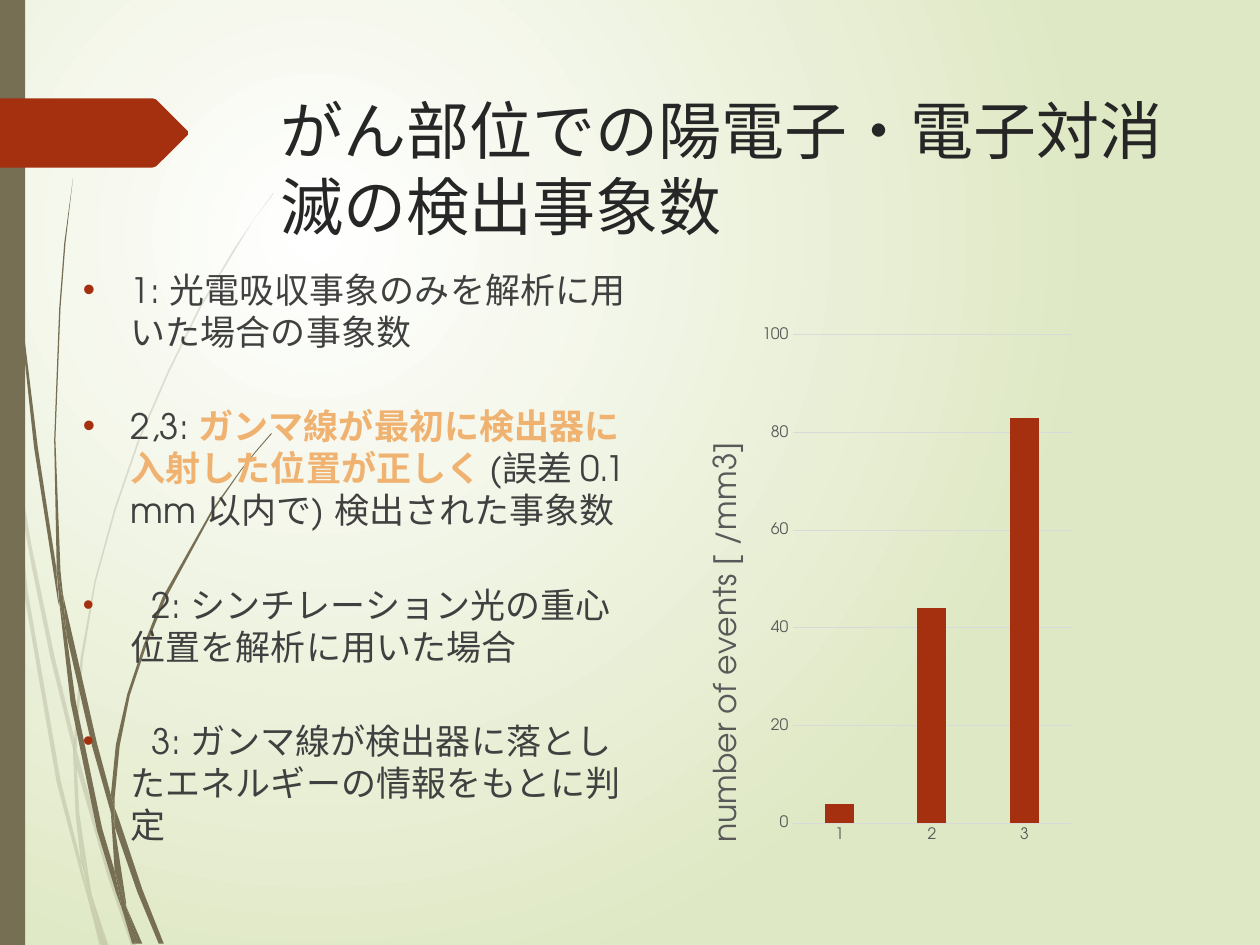
import pptx
import pptx.chart.data
import pptx.dml.color
import pptx.enum.chart
import pptx.enum.shapes
import pptx.enum.text
import pptx.oxml
import pptx.oxml.ns
import pptx.util

Inches, Pt = pptx.util.Inches, pptx.util.Pt
RGB = pptx.dml.color.RGBColor
qn = pptx.oxml.ns.qn

# Content
TITLE = "がん部位での陽電子・電子対消滅の検出事象数"
BULLETS = [
    [("1: 光電吸収事象のみを解析に用いた場合の事象数", "plain")],
    [("2,3: ", "plain"),
     ("ガンマ線が最初に検出器に入射した位置が正しく ", "key"),
     ("(誤差 0.1 mm 以内で) 検出された事象数", "plain")],
    [("　", "indent"), ("2: シンチレーション光の重心位置を解析に用いた場合", "plain")],
    [("　", "indent"), ("3: ガンマ線が検出器に落としたエネルギーの情報をもとに判定", "plain")],
]
CATEGORIES = ["1", "2", "3"]
EVENTS = [4, 44, 83]
AXIS_TITLE = "number of events [ /mm3]"

# Format
FONT = "TeX Gyre Adventor"
WHITE, PALE_GREEN = RGB(0xFF, 0xFF, 0xFF), RGB(0xDF, 0xE8, 0xC4)
OLIVE, RUST, ORANGE = RGB(0x76, 0x6F, 0x54), RGB(0xA5, 0x30, 0x10), RGB(0xF0, 0xB2, 0x70)
TITLE_INK, BODY_INK = RGB(0x26, 0x26, 0x26), RGB(0x40, 0x40, 0x40)
AXIS_INK, GRID = RGB(0x59, 0x59, 0x59), RGB(0xD9, 0xD9, 0xD9)
STYLES = {
    "title": {"size": Pt(36), "name": FONT, "color": TITLE_INK},
    "plain": {"size": Pt(20), "name": FONT, "color": BODY_INK, "bold": False},
    "key": {"size": Pt(20), "name": FONT, "color": ORANGE, "bold": True},
    "indent": {"size": Pt(12), "name": FONT, "color": BODY_INK},
    "chart": {"size": Pt(10), "name": FONT},
    "tick": {"size": Pt(9), "name": FONT, "color": AXIS_INK},
    "axis title": {"size": Pt(18), "name": FONT, "color": AXIS_INK, "bold": False},
}

# Outlines in inches: blades of grass behind the text, and the title's tag
PALE_BLADES = [
    [(.08, 3.5), (.06, 3.22), (0, 2.82), (0, 2.99), (.07, 3.44)],
    [(.4, 5.22), (.59, 5.99), (.59, 5.86), (.43, 5.2), (.25, 4.33), (.1, 3.45),
     (.12, 3.76), (.25, 4.49)],
    [(.64, 6.07), (.61, 5.96), (.61, 6.1), (.85, 6.94), (1.04, 7.5), (1.08, 7.5), (.88, 6.92)],
    [(.83, 7.5), (.86, 7.5), (.73, 7.11)],
    [(.64, 6.83), (.48, 6.19), (.22, 4.69), (.12, 3.76), (.08, 3.5), (.19, 4.7),
     (.45, 6.21), (.64, 6.93), (.7, 7.14), (.69, 7.07)],
    [(.58, 5.99), (.6, 6.46), (.64, 6.83), (.67, 6.92), (.73, 7.11), (.72, 7.06),
     (.63, 6.46), (.61, 6.1), (.61, 6.08)],
    [(.61, 5.84), (.66, 5.22), (.76, 4.62), (.92, 4.04), (1.11, 3.49), (1.34, 2.96),
     (1.59, 2.45), (1.87, 1.98), (2.01, 1.75), (2.17, 1.54), (2.17, 1.53), (2.01, 1.75),
     (1.86, 1.97), (1.58, 2.44), (1.33, 2.95), (1.1, 3.48), (.91, 4.03), (.75, 4.61),
     (.64, 5.22), (.59, 5.84), (.59, 5.86), (.61, 5.96)],
    [(.7, 7.14), (.79, 7.5), (.82, 7.5)],
    [(.61, 6.08), (.61, 6.1), (.61, 5.96), (.59, 5.86), (.58, 5.99)],
    [(.67, 6.92), (.65, 6.83), (.69, 7.07), (.7, 7.14), (.82, 7.5), (.83, 7.5), (.73, 7.11)],
]
DARK_BLADES = [
    [(.05, 1.1), (.14, 2.33), (.27, 3.55), (.46, 4.77), (.47, 4.81), (.45, 4.57), (.45, 4.53),
     (.3, 3.55), (.15, 2.32), (.06, 1.09), (.04, .48), (.03, 0), (.02, 0), (.03, .48)],
    [(.73, 5.92), (.88, 6.45), (.88, 6.33), (.88, 6.31), (.77, 5.9), (.5, 4.72), (.53, 5.05)],
    [(.94, 6.49), (.91, 6.41), (.91, 6.56), (1.09, 7.08), (1.26, 7.49), (1.3, 7.49), (1.13, 7.06)],
    [(.91, 6.91), (.81, 6.57), (.6, 5.56), (.53, 5.05), (.47, 4.77), (.56, 5.57),
     (.77, 6.59), (.92, 7.08), (.97, 7.22), (.96, 7.17)],
    [(.5, 4.72), (.48, 4.53), (.44, 3.49), (.48, 2.45), (.52, 1.93), (.58, 1.41),
     (.51, 1.93), (.47, 2.45), (.43, 3.49), (.45, 4.49), (.49, 4.72)],
    [(1.1, 7.49), (1.13, 7.49), (1, 7.19)],
    [(.47, 4.77), (.53, 5.05), (.5, 4.72), (.49, 4.72), (.45, 4.49), (.45, 4.53)],
    [(.91, 6.33), (.95, 5.92), (1.03, 5.52), (1.16, 5.13), (1.31, 4.76), (1.69, 4.06),
     (1.91, 3.74), (2.03, 3.59), (2.16, 3.44), (2.15, 3.44), (2.03, 3.58), (1.91, 3.73),
     (1.68, 4.05), (1.29, 4.74), (1.14, 5.12), (1.01, 5.51), (.92, 5.91), (.88, 6.31), (.91, 6.41)],
    [(.97, 7.22), (1.05, 7.49), (1.08, 7.49)],
    [(.88, 6.45), (.91, 6.91), (.96, 7.06), (1, 7.19), (1, 7.16), (.91, 6.56), (.9, 6.51)],
    [(.88, 6.45), (.9, 6.51), (.91, 6.56), (.91, 6.41), (.88, 6.31), (.88, 6.33)],
    [(.96, 7.06), (.91, 6.91), (.96, 7.17), (.97, 7.22), (1.08, 7.49), (1.1, 7.49), (1, 7.19)],
]
TITLE_TAG = [(0, .78), (1.21, .78), (1.24, .79), (1.49, 1.04), (1.49, 1.07),
             (1.24, 1.32), (1.21, 1.33), (0, 1.33)]


def set_font(font, style):
    for key, value in STYLES[style].items():
        if key == "color":
            font.color.rgb = value
        else:
            setattr(font, key, value)


def xml(text, prefix="a"):
    return pptx.oxml.parse_xml(text.replace("{ns}", pptx.oxml.ns.nsdecls(prefix)))


def paint(shape, color, opacity=100):
    shape.shadow.inherit = False
    shape.line.fill.background()
    shape.fill.solid()
    shape.fill.fore_color.rgb = color
    if opacity < 100:
        color_node = shape._element.spPr.find(".//" + qn("a:srgbClr"))
        color_node.append(xml(f'<a:alpha {{ns}} val="{opacity * 1000}"/>'))


def add_outline(points, color, opacity=100):
    start, *rest = [(round(x * 100), round(y * 100)) for x, y in points]
    builder = slide.shapes.build_freeform(*start, scale=Inches(0.01))
    builder.add_line_segments(rest, close=True)
    paint(builder.convert_to_shape(), color, opacity)


def add_text(box, paragraphs):
    frame = slide.shapes.add_textbox(*map(Inches, box)).text_frame
    frame.word_wrap = True
    frame.vertical_anchor = pptx.enum.text.MSO_ANCHOR.TOP
    for index, runs in enumerate(paragraphs):
        paragraph = frame.add_paragraph() if index else frame.paragraphs[0]
        for text, style in runs:
            run = paragraph.add_run()
            run.text = text
            set_font(run.font, style)
    return frame


def place(parent, position, **shares):
    """Give a chart part a fixed place, in shares of the chart's size."""
    for old in parent.findall(qn("c:layout")):
        parent.remove(old)
    target = '<c:layoutTarget val="inner"/>' if "w" in shares else ""
    modes = "".join(f'<c:{k}Mode val="edge"/>' for k in "xy")
    values = "".join(f'<c:{k} val="{v}"/>' for k, v in shares.items())
    parent.insert(position, xml(
        f"<c:layout {{ns}}><c:manualLayout>{target}{modes}{values}</c:manualLayout></c:layout>", "c"))


deck = pptx.Presentation()
deck.slide_width, deck.slide_height = Inches(10), Inches(7.5)
slide = deck.slides.add_slide(deck.slide_layouts[6])

# Background: a glow from the upper left
backdrop = slide.background.fill
backdrop.gradient()
for stop, color in zip(backdrop.gradient_stops, (WHITE, PALE_GREEN)):
    stop.color.rgb = color
gradient = slide._element.find(".//" + qn("a:gradFill"))
gradient.replace(gradient.find(qn("a:lin")), xml(
    '<a:path {ns} path="circle"><a:fillToRect l="50000" t="50000" r="100000" b="100000"/></a:path>'))

# Decoration
for blades, opacity in ((PALE_BLADES, 20), (DARK_BLADES, 100)):
    for blade in blades:
        add_outline(blade, OLIVE, opacity)
side_bar = slide.shapes.add_shape(
    pptx.enum.shapes.MSO_SHAPE.RECTANGLE, 0, 0, Inches(0.2), deck.slide_height)
paint(side_bar, OLIVE)
add_outline(TITLE_TAG, RUST)

# Title and bullets
heading = add_text((2.13, 0.68, 7.21, 1.4), [[(TITLE, "title")]])
heading.paragraphs[0].runs[0].font._element.append(xml(f'<a:ea {{ns}} typeface="{FONT}"/>'))
body = add_text((0.56, 2.08, 4.64, 4.71), BULLETS)
for index, paragraph in enumerate(body.paragraphs):
    paragraph.space_before = Pt(30 if index else 0)
    bullet_size = 150 if BULLETS[index][0][1] == "indent" else 100
    properties = paragraph._p.get_or_add_pPr()
    properties.set("marL", str(Inches(0.38)))
    properties.set("indent", str(Inches(-0.38)))
    for bullet_part in (f'<a:buClr {{ns}}><a:srgbClr val="{RUST}"/></a:buClr>',
                        f'<a:buSzPct {{ns}} val="{bullet_size * 1000}"/>',
                        '<a:buFont {ns} typeface="Arial"/>',
                        '<a:buChar {ns} char="•"/>'):
        properties.append(xml(bullet_part))

# Chart
data = pptx.chart.data.CategoryChartData()
data.categories = CATEGORIES
data.add_series("Series 1", EVENTS)
chart = slide.shapes.add_chart(
    pptx.enum.chart.XL_CHART_TYPE.COLUMN_CLUSTERED,
    *map(Inches, (5.46, 2.53, 3.1, 4.26)), data).chart
chart.has_legend = chart.has_title = False
set_font(chart.font, "chart")
plot = chart.plots[0]
plot.gap_width, plot.overlap, plot.vary_by_categories = 219, -27, False
bars = plot.series[0].format.fill
bars.solid()
bars.fore_color.rgb = RUST

event_axis, case_axis = chart.value_axis, chart.category_axis
for axis in (event_axis, case_axis):
    axis.major_tick_mark = axis.minor_tick_mark = pptx.enum.chart.XL_TICK_MARK.NONE
    set_font(axis.tick_labels.font, "tick")
event_axis.minimum_scale, event_axis.maximum_scale, event_axis.major_unit = 0, 100, 20
event_axis.format.line.fill.background()
for line in (case_axis.format.line, event_axis.major_gridlines.format.line):
    line.color.rgb = GRID
    line.width = Pt(0.75)

event_title = event_axis.axis_title.text_frame
event_title.text = AXIS_TITLE
set_font(event_title.paragraphs[0].runs[0].font, "axis title")
event_title._txBody.bodyPr.set("rot", "-5400000")
event_title._txBody.bodyPr.set("vert", "horz")
place(event_axis.axis_title._element, 1, x=0.04, y=0.22)
place(chart._chartSpace.chart.plotArea, 0, x=0.27, y=0.03, w=0.71, h=0.91)

deck.save("out.pptx")
